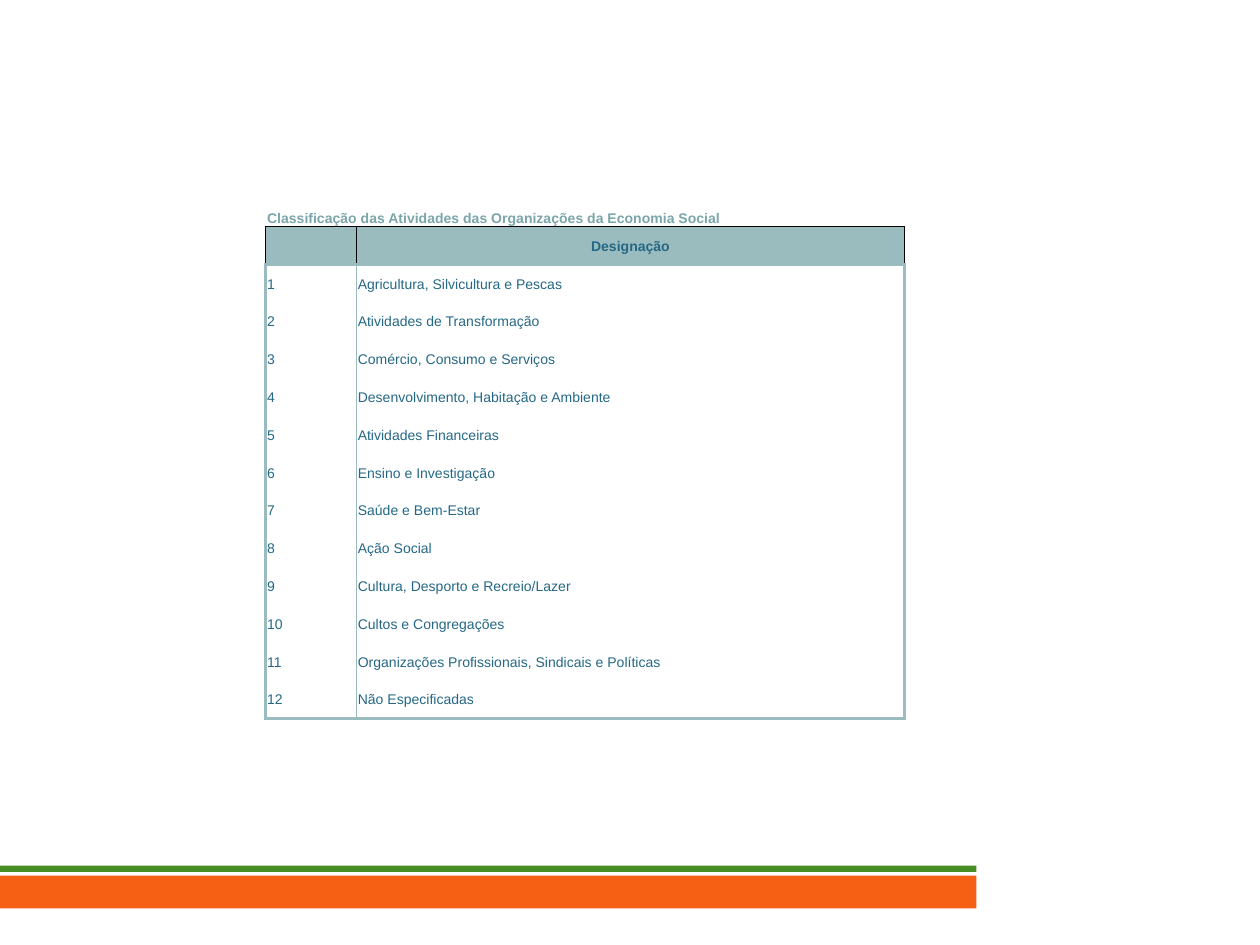
from lxml import etree
from pptx import Presentation
from pptx import util as u
from pptx.dml.color import RGBColor
from pptx.enum import shapes, text
from pptx.oxml import ns

TEAL, WHITE, BLACK = "9BBCBF", "FFFFFF", "000000"
NAVY, CAPTION_TEAL = "256885", "7AA5A9"
CAPTION = "Classificação das Atividades das Organizações da Economia Social"
ACTIVITIES = [
    "Agricultura, Silvicultura e Pescas",
    "Atividades de Transformação",
    "Comércio, Consumo e Serviços",
    "Desenvolvimento, Habitação e Ambiente",
    "Atividades Financeiras",
    "Ensino e Investigação",
    "Saúde e Bem-Estar",
    "Ação Social",
    "Cultura, Desporto e Recreio/Lazer",
    "Cultos e Congregações",
    "Organizações Profissionais, Sindicais e Políticas",
    "Não Especificadas",
]
COLUMN_WIDTHS = [0.72, 4.35]
ROW_HEIGHT = 0.3
THICK, THIN, EDGE = (TEAL, 2), (TEAL, 0.5), (BLACK, 0.5)


def color(value):
    return RGBColor.from_string(value)


class SlideBuilder:
    """Draws styled elements on the current slide."""

    def __init__(self, page, font="Arial", size=8):
        self.page, self.font, self.size = page, font, size

    def bar(self, top, height, fill):
        bar = self.page.shapes.add_shape(
            shapes.MSO_SHAPE.RECTANGLE, 0, u.Inches(top), u.Inches(7.75), u.Inches(height))
        bar.shadow.inherit = False
        bar.fill.solid()
        bar.fill.fore_color.rgb = color(fill)
        bar.line.fill.background()

    def table(self, left, top, widths, row_count):
        frame = self.page.shapes.add_table(
            row_count, len(widths), u.Inches(left), u.Inches(top),
            u.Inches(sum(widths)), u.Inches(ROW_HEIGHT * row_count))
        table = frame.table
        table.first_row = table.horz_banding = False
        for column, width in zip(table.columns, widths):
            column.width = u.Inches(width)
        for row in table.rows:
            row.height = u.Inches(ROW_HEIGHT)
        return table

    def cell(self, cell, words, fill=WHITE, ink=NAVY, bold=False,
             anchor=text.MSO_ANCHOR.MIDDLE, align=text.PP_ALIGN.LEFT, **borders):
        cell.fill.solid()
        cell.fill.fore_color.rgb = color(fill)
        cell.vertical_anchor = anchor
        cell.margin_left = cell.margin_right = cell.margin_top = u.Inches(0.01)
        cell.margin_bottom = 0
        para = cell.text_frame.paragraphs[0]
        para.alignment = align
        para.font.size = u.Pt(self.size)
        if words:
            span = para.add_run()
            span.text = words
            span.font.name, span.font.size = self.font, u.Pt(self.size)
            span.font.bold = bold
            span.font.color.rgb = color(ink)
        self.borders(cell, borders)

    def borders(self, cell, borders):
        properties = cell._tc.get_or_add_tcPr()
        for index, side in enumerate(("left", "right", "top", "bottom")):
            line = etree.Element(ns.qn("a:ln" + side[0].upper()))
            if side in borders:
                stroke, width = borders[side]
                line.set("w", str(u.Pt(width)))
                paint = etree.SubElement(line, ns.qn("a:solidFill"))
                etree.SubElement(paint, ns.qn("a:srgbClr"), val=stroke)
            else:
                etree.SubElement(line, ns.qn("a:noFill"))
            properties.insert(index, line)


def main():
    deck = Presentation()
    deck.slide_width, deck.slide_height = u.Inches(10), u.Inches(7.5)
    builder = SlideBuilder(deck.slides.add_slide(deck.slide_layouts[6]))
    builder.bar(6.95, 0.26, "F66014")
    builder.bar(6.87, 0.05, "488E27")

    table = builder.table(2.11, 1.5, COLUMN_WIDTHS, len(ACTIVITIES) + 2)
    table.cell(0, 0).merge(table.cell(0, 1))
    for column, words in enumerate([CAPTION, ""]):
        builder.cell(table.cell(0, column), words, ink=CAPTION_TEAL, bold=True,
                     anchor=text.MSO_ANCHOR.BOTTOM, bottom=EDGE)
    for column, words in enumerate(["", "Designação"]):
        builder.cell(table.cell(1, column), words, fill=TEAL, bold=True,
                     align=text.PP_ALIGN.CENTER,
                     left=EDGE, right=EDGE, top=EDGE, bottom=THICK)
    for number, activity in enumerate(ACTIVITIES, 1):
        ends = {}
        if number == 1:
            ends["top"] = THICK
        if number == len(ACTIVITIES):
            ends["bottom"] = THICK
        row = number + 1
        builder.cell(table.cell(row, 0), str(number), left=THICK, right=THIN, **ends)
        builder.cell(table.cell(row, 1), activity, left=THIN, right=THICK, **ends)
    deck.save("out.pptx")


if __name__ == "__main__":
    main()
